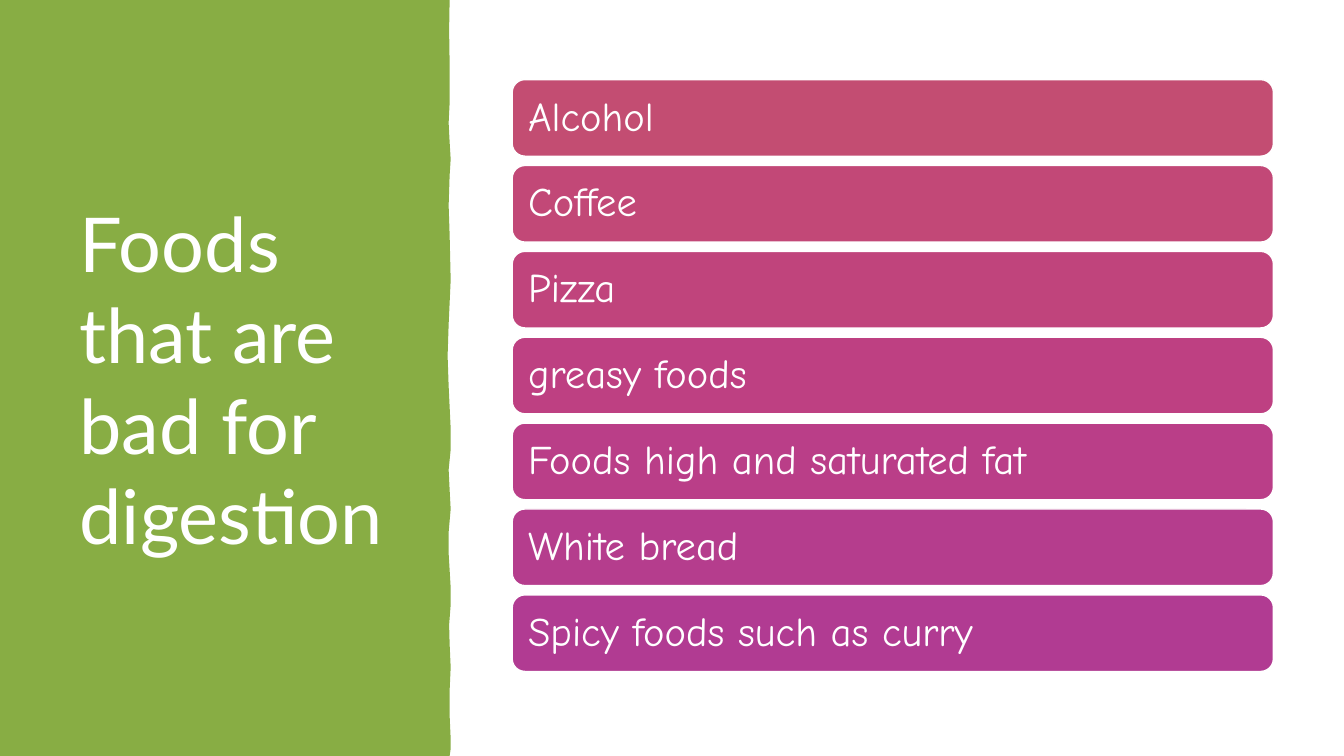
import pptx
import pptx.dml.color
import pptx.enum.shapes
import pptx.enum.text
import pptx.util
from pptx.util import Inches

THEME = {
    "green": "88AD44",
    "white": "FFFFFF",
    "bars": ["C34D72", "C24877", "C0447C", "BE4082", "BA3E88", "B53D8D", "B13B92"],
    "title": {"name": "Lato", "size": pptx.util.Pt(54)},
    "body": {"name": "Comic Neue", "size": pptx.util.Pt(29)},
}
FOODS = [
    "Alcohol",
    "Coffee",
    "Pizza",
    "greasy foods",
    "Foods high and saturated fat",
    "White bread",
    "Spicy foods such as curry",
]
# Wavy right edge of the green panel, in inches from top to bottom
PANEL_EDGE = [
    (4.46, 0), (4.455, 0.3), (4.46, 0.63), (4.46, 1.02), (4.45, 1.22),
    (4.46, 1.41), (4.47, 1.58), (4.46, 1.74), (4.45, 2.04), (4.46, 2.33),
    (4.47, 2.78), (4.45, 3.22), (4.44, 3.53), (4.45, 3.83), (4.47, 4.25),
    (4.47, 4.46), (4.45, 4.66), (4.46, 4.86), (4.47, 5.05), (4.45, 5.28),
    (4.45, 5.49), (4.47, 5.83), (4.47, 6), (4.455, 6.2), (4.46, 6.39),
    (4.47, 6.62), (4.46, 6.85), (4.46, 7.1), (4.47, 7.33), (4.47, 7.43),
    (4.46, 7.5),
]


def color(code):
    return pptx.dml.color.RGBColor.from_string(code)


def write_text(shape, text, font_style, inset):
    """Put one left-aligned, vertically centred white paragraph in a shape."""
    frame = shape.text_frame
    frame.word_wrap = True
    frame.vertical_anchor = pptx.enum.text.MSO_ANCHOR.MIDDLE
    for side, length in inset.items():
        setattr(frame, f"margin_{side}", Inches(length))
    paragraph = frame.paragraphs[0]
    paragraph.text = text
    paragraph.alignment = pptx.enum.text.PP_ALIGN.LEFT
    for attribute, value in font_style.items():
        setattr(paragraph.font, attribute, value)
    paragraph.font.color.rgb = color(THEME["white"])
    return paragraph


presentation = pptx.Presentation()
presentation.slide_width = Inches(13.33)
presentation.slide_height = Inches(7.5)
slide = presentation.slides.add_slide(presentation.slide_layouts[6])
slide.background.fill.solid()
slide.background.fill.fore_color.rgb = color(THEME["white"])

# Green panel
builder = slide.shapes.build_freeform(0, 0)
outline = [(Inches(x), Inches(y)) for x, y in PANEL_EDGE + [(0, 7.5)]]
builder.add_line_segments(outline, close=True)
panel = builder.convert_to_shape()
panel.shadow.inherit = False
panel.fill.solid()
panel.fill.fore_color.rgb = color(THEME["green"])
panel.line.fill.background()

# Title
title = slide.shapes.add_textbox(Inches(0.69), Inches(0.7), Inches(3.39), Inches(6.11))
title_inset = {"left": 0.1, "right": 0.1, "top": 0.05, "bottom": 0.05}
paragraph = write_text(title, "Foods that are bad for digestion", THEME["title"], title_inset)
paragraph.space_after = pptx.util.Pt(6)

# Food bars
bar_top, bar_step = 0.79, 0.852
bar_inset = dict.fromkeys(["left", "right", "top", "bottom"], 0.12)
for index, (food, bar_color) in enumerate(zip(FOODS, THEME["bars"])):
    bar = slide.shapes.add_shape(
        pptx.enum.shapes.MSO_SHAPE.ROUNDED_RECTANGLE,
        Inches(5.08), Inches(bar_top + index * bar_step), Inches(7.55), Inches(0.76),
    )
    bar.shadow.inherit = False
    bar.fill.solid()
    bar.fill.fore_color.rgb = color(bar_color)
    bar.line.color.rgb = color(THEME["white"])
    bar.line.width = pptx.util.Pt(1)
    paragraph = write_text(bar, food, THEME["body"], bar_inset)
    paragraph.line_spacing = 0.9

presentation.save("out.pptx")
